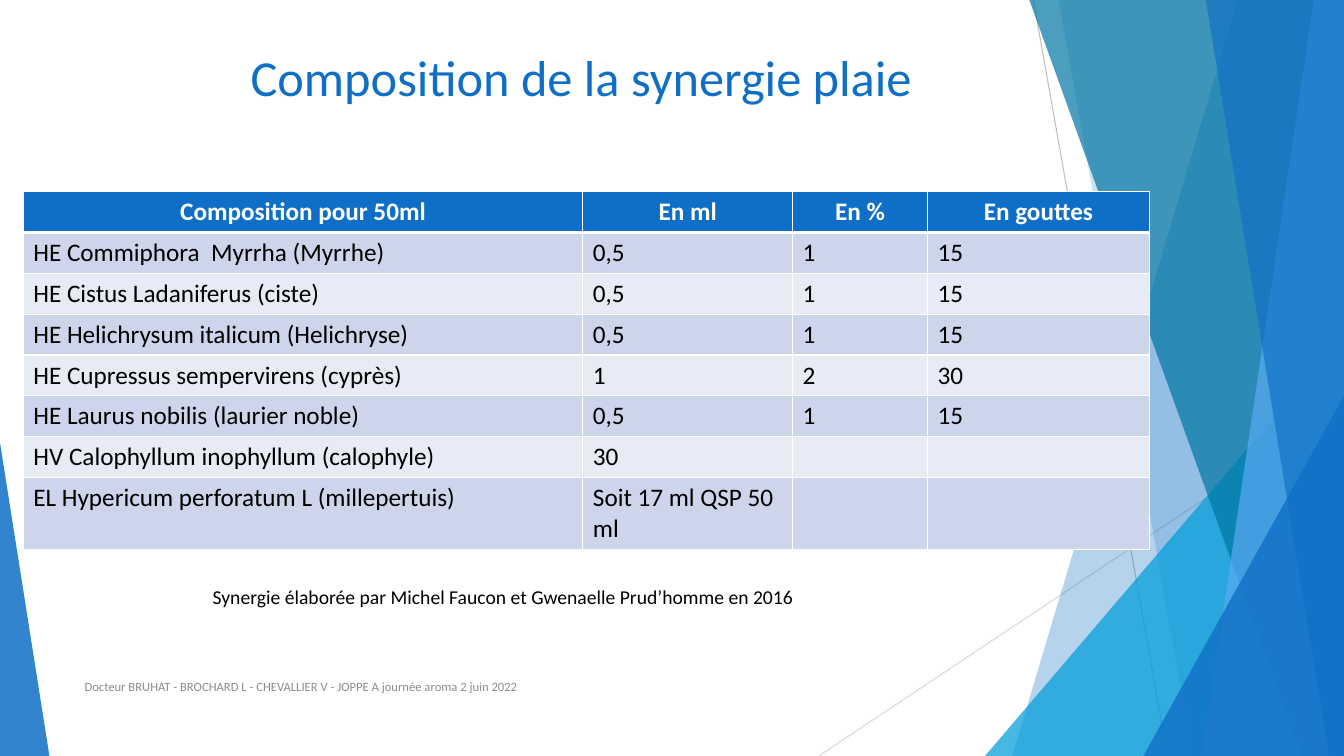
from lxml.etree import SubElement
from pptx import Presentation
from pptx.dml.color import RGBColor
from pptx.enum.shapes import MSO_CONNECTOR, MSO_SHAPE
from pptx.enum.text import MSO_ANCHOR, MSO_AUTO_SIZE, PP_ALIGN
from pptx.oxml.ns import qn
from pptx.util import Inches, Pt

WIDTH, HEIGHT = Inches(13.33), Inches(7.5)
FONT = "Calibri"
BLUE = RGBColor(0x0F, 0x6F, 0xC6)
CYAN = RGBColor(0x00, 0x9D, 0xD9)
TEAL = RGBColor(0x00, 0x76, 0xA3)
SKY = RGBColor(0x59, 0xAA, 0xF2)
WHITE = RGBColor(0xFF, 0xFF, 0xFF)
BLACK = RGBColor(0x00, 0x00, 0x00)
GREY = RGBColor(0x8C, 0x8C, 0x8C)
LINE_GREY = RGBColor(0xBF, 0xBF, 0xBF)
PALE_GREY = RGBColor(0xD9, 0xD9, 0xD9)
BAND_DARK = RGBColor(0xCC, 0xD5, 0xEA)
BAND_LIGHT = RGBColor(0xE7, 0xEB, 0xF5)

COLUMN_SHARES = (41.64, 15.6, 10.05, 16.5)
ROW_SHARE = 5.41
COMPOSITION = (
    ("Composition pour 50ml", "En ml", "En %", "En gouttes"),
    ("HE Commiphora  Myrrha (Myrrhe)", "0,5", "1", "15"),
    ("HE Cistus Ladaniferus (ciste)", "0,5", "1", "15"),
    ("HE Helichrysum italicum (Helichryse)", "0,5", "1", "15"),
    ("HE Cupressus sempervirens (cyprès)", "1", "2", "30"),
    ("HE Laurus nobilis (laurier noble)", "0,5", "1", "15"),
    ("HV Calophyllum inophyllum (calophyle)", "30", "", ""),
    ("EL Hypericum perforatum L (millepertuis)", "Soit 17 ml QSP 50 ml", "", ""),
)


def across(percent):
    """Turn a percentage of the slide width into a length."""
    return int(WIDTH * percent / 100)


def down(percent):
    """Turn a percentage of the slide height into a length."""
    return int(HEIGHT * percent / 100)


def place(box):
    """Turn a box of left, top, width, height percentages into lengths."""
    left, top, width, height = box
    return across(left), down(top), across(width), down(height)


def style(paragraph, size, color, bold=False, alignment=PP_ALIGN.LEFT):
    """Set the font and alignment of a paragraph."""
    paragraph.alignment = alignment
    font = paragraph.font
    font.name, font.size, font.bold = FONT, Pt(size), bold
    font.color.rgb = color


def paint(shape, color, opacity):
    """Give a shape a see-through fill without line or shadow."""
    shape.shadow.inherit = False
    shape.line.fill.background()
    shape.fill.solid()
    shape.fill.fore_color.rgb = color
    color_element = shape.fill._xPr.find(qn("a:solidFill"))[0]
    SubElement(color_element, qn("a:alpha"), val=str(opacity * 1000))


def add_thread(slide, start, end, color):
    """Draw a thin line between two points of the slide."""
    thread = slide.shapes.add_connector(
        MSO_CONNECTOR.STRAIGHT, across(start[0]), down(start[1]), across(end[0]), down(end[1]))
    thread.line.color.rgb = color
    thread.line.width = Pt(0.75)
    SubElement(thread._element.spPr, qn("a:effectLst"))


def add_ribbon(slide, top_left, bottom_left, color, opacity):
    """Draw a full-height band with a slanted left side, up to the right edge."""
    builder = slide.shapes.build_freeform(across(top_left), 0)
    builder.add_line_segments([(WIDTH, 0), (WIDTH, HEIGHT), (across(bottom_left), HEIGHT)])
    paint(builder.convert_to_shape(), color, opacity)


def add_corner(slide, box, apex, color, opacity):
    """Draw a triangle with its apex at a share of its width."""
    triangle = slide.shapes.add_shape(MSO_SHAPE.ISOSCELES_TRIANGLE, *place(box))
    triangle.adjustments[0] = apex
    paint(triangle, color, opacity)


def add_facets(slide):
    """Draw the overlapping facets at the sides of the slide."""
    add_thread(slide, (76.89, 0), (86.87, 100), LINE_GREY)
    add_thread(slide, (100, 53.73), (60.92, 100), PALE_GREY)
    add_ribbon(slide, 92.12, 75.32, BLUE, 30)
    add_ribbon(slide, 78.77, 88.75, BLUE, 20)
    add_corner(slide, (73.29, 44.4, 26.71, 55.6), 1, CYAN, 72)
    add_ribbon(slide, 76.59, 96.85, TEAL, 70)
    add_ribbon(slide, 97.75, 89.42, SKY, 70)
    add_ribbon(slide, 89.72, 98.87, BLUE, 65)
    add_corner(slide, (85.07, 52.4, 14.93, 47.6), 1, BLUE, 80)
    add_corner(slide, (0, 58.53, 3.68, 41.47), 0, BLUE, 85)


def add_title(slide, box, text):
    """Move the title placeholder to its box and format it."""
    title = slide.shapes.title
    title.left, title.top, title.width, title.height = place(box)
    frame = title.text_frame
    frame.text = text
    frame.auto_size = MSO_AUTO_SIZE.NONE
    frame.vertical_anchor = MSO_ANCHOR.TOP
    style(frame.paragraphs[0], 36, BLUE, alignment=PP_ALIGN.CENTER)


def add_borders(cell, top, bottom):
    """Draw white cell borders, with the given top and bottom widths in points."""
    properties = cell._tc.get_or_add_tcPr()
    for tag, width in (("a:lnL", 1), ("a:lnR", 1), ("a:lnT", top), ("a:lnB", bottom)):
        border = SubElement(properties, qn(tag), w=str(Pt(width)))
        fill = SubElement(border, qn("a:solidFill"))
        SubElement(fill, qn("a:srgbClr"), val=str(WHITE))


def add_composition_table(slide, left, top):
    """Add the banded table of ingredients with its corner at left, top."""
    box = (left, top, sum(COLUMN_SHARES), ROW_SHARE * len(COMPOSITION))
    table = slide.shapes.add_table(len(COMPOSITION), len(COLUMN_SHARES), *place(box)).table
    for column, share in zip(table.columns, COLUMN_SHARES):
        column.width = across(share)
    for index, (row, texts) in enumerate(zip(table.rows, COMPOSITION)):
        row.height = down(ROW_SHARE)
        header = index == 0
        band = BLUE if header else (BAND_LIGHT, BAND_DARK)[index % 2]
        for cell, text in zip(row.cells, texts):
            cell.text = text
            add_borders(cell, 3 if index == 1 else 1, 3 if header else 1)
            cell.fill.solid()
            cell.fill.fore_color.rgb = band
            style(cell.text_frame.paragraphs[0], 18, WHITE if header else BLACK, header,
                  PP_ALIGN.CENTER if header else PP_ALIGN.LEFT)


def add_note(slide, box, text, size, color, anchor):
    """Add a single line of text in a box."""
    frame = slide.shapes.add_textbox(*place(box)).text_frame
    frame.word_wrap = True
    frame.vertical_anchor = anchor
    frame.text = text
    style(frame.paragraphs[0], size, color)


def build_composition_slide(presentation):
    """Build the slide on the composition of the wound blend."""
    slide = presentation.slides.add_slide(presentation.slide_layouts[5])
    add_facets(slide)
    add_title(slide, (10.43, 5.47, 65.64, 11.2), "Composition de la synergie plaie")
    add_composition_table(slide, 1.73, 25.33)
    add_note(slide, (5.55, 88.13, 51.69, 5.33),
             "Docteur BRUHAT - BROCHARD L - CHEVALLIER V - JOPPE A journée aroma 2 juin 2022",
             9, GREY, MSO_ANCHOR.MIDDLE)
    add_note(slide, (15.08, 76.67, 78.32, 4.53),
             "Synergie élaborée par Michel Faucon et Gwenaelle Prud’homme en 2016",
             14, BLACK, MSO_ANCHOR.TOP)


def main():
    """Create and save the presentation."""
    presentation = Presentation()
    presentation.slide_width, presentation.slide_height = WIDTH, HEIGHT
    build_composition_slide(presentation)
    presentation.save("out.pptx")


if __name__ == "__main__":
    main()
